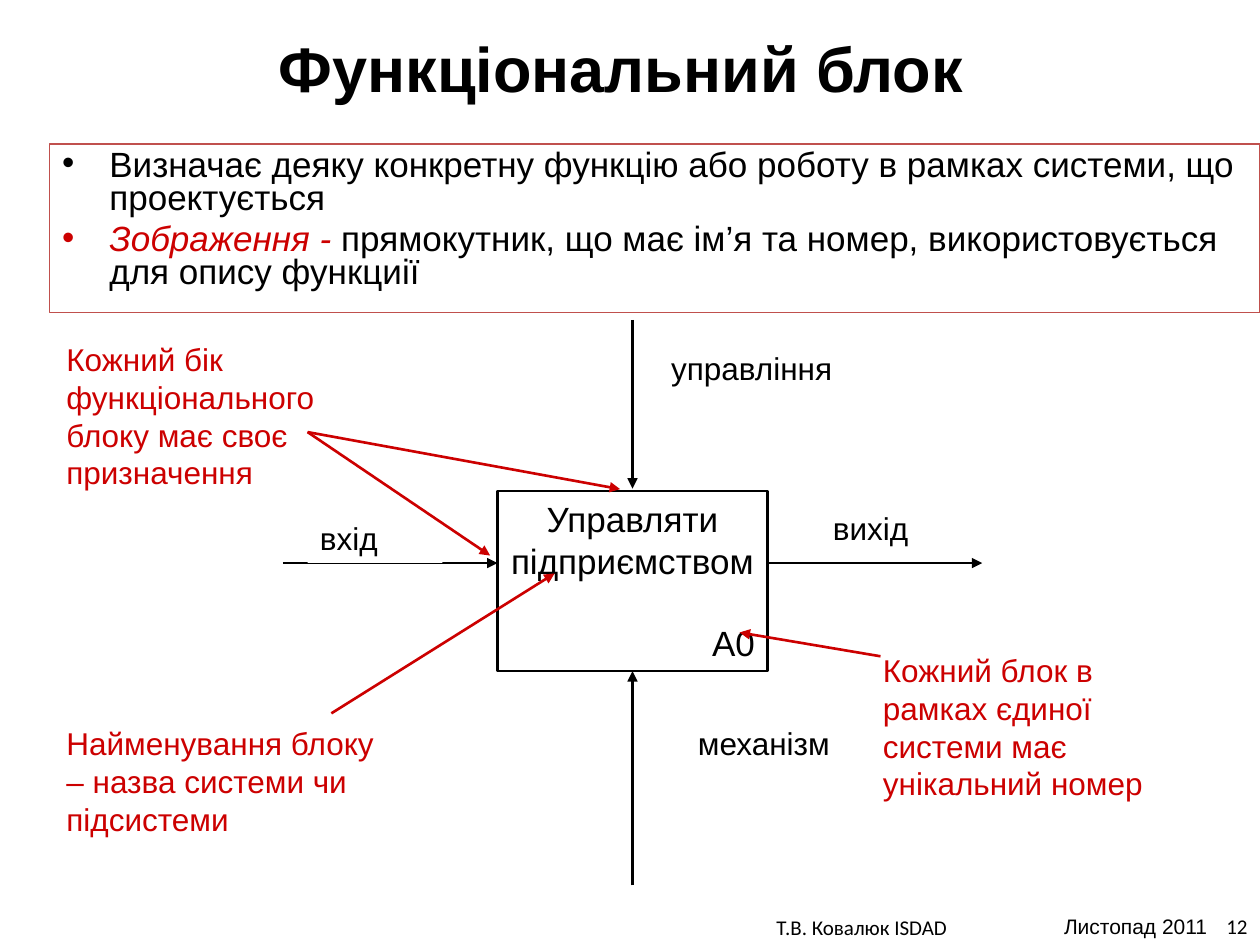
from lxml.etree import SubElement
from pptx import Presentation
from pptx.dml.color import RGBColor
from pptx.enum.shapes import MSO_CONNECTOR as Connector, MSO_SHAPE as Shape
from pptx.enum.text import MSO_ANCHOR as Anchor, MSO_AUTO_SIZE as AutoSize, PP_ALIGN as Align
from pptx.oxml.ns import qn
from pptx.util import Cm, Pt

BLACK, WHITE, RED, BORDER = "000000", "FFFFFF", "CC0000", "C0504D"


def colour(code):
    return RGBColor.from_string(code)


class BlockSlide:
    font = "Arial"
    line_width = 1.5

    def __init__(self, slide):
        self.slide = slide

    def style(self, run, size, code=BLACK, font=None, bold=False, italic=False):
        run.font.name = font or self.font
        run.font.size = Pt(size)
        run.font.bold = bold
        run.font.italic = italic
        run.font.color.rgb = colour(code)

    def place(self, shape, left, top, width, height):
        shape.left, shape.top = Cm(left), Cm(top)
        shape.width, shape.height = Cm(width), Cm(height)

    def title(self, text, *box):
        heading = self.slide.shapes.title
        self.place(heading, *box)
        frame = heading.text_frame
        frame.text = text
        frame.auto_size = AutoSize.NONE
        frame.vertical_anchor = Anchor.MIDDLE
        frame.paragraphs[0].alignment = Align.CENTER
        self.style(frame.paragraphs[0].runs[0], 36, bold=True)

    def bullets(self, items, *box):
        body = self.slide.placeholders[1]
        self.place(body, *box)
        body.line.color.rgb = colour(BORDER)
        body.line.width = Pt(0.75)
        frame = body.text_frame
        frame.auto_size = AutoSize.NONE
        frame.vertical_anchor = Anchor.TOP
        for index, (term, definition) in enumerate(items):
            paragraph = frame.add_paragraph() if index else frame.paragraphs[0]
            properties = paragraph._p.get_or_add_pPr()
            properties.set("marL", str(Cm(0.95)))
            properties.set("indent", str(-Cm(0.95)))
            SubElement(properties, qn("a:buFont"), typeface=self.font)
            SubElement(properties, qn("a:buChar"), char="•")
            paragraph.line_spacing = 0.8
            paragraph.space_before = Pt(4 if index else 0)
            if term:
                run = paragraph.add_run()
                run.text = term
                self.style(run, 20, RED, italic=True)
            run = paragraph.add_run()
            run.text = definition
            self.style(run, 20)

    def text(self, text, *box, size=18, code=BLACK, font=None, align=Align.LEFT):
        frame = self.slide.shapes.add_textbox(*map(Cm, box)).text_frame
        frame.word_wrap = True
        frame.text = text
        frame.paragraphs[0].alignment = align
        self.style(frame.paragraphs[0].runs[0], size, code, font)

    def rectangle(self, *box):
        shape = self.slide.shapes.add_shape(Shape.RECTANGLE, *map(Cm, box))
        shape.shadow.inherit = False
        shape.fill.solid()
        shape.fill.fore_color.rgb = colour(WHITE)
        shape.text_frame.vertical_anchor = Anchor.TOP
        return shape

    def label(self, text, *box):
        shape = self.rectangle(*box)
        shape.line.fill.background()
        paragraph = shape.text_frame.paragraphs[0]
        paragraph.text = text
        paragraph.alignment = Align.LEFT
        self.style(paragraph.runs[0], 18)

    def block(self, name, number, *box):
        shape = self.rectangle(*box)
        shape.line.color.rgb = colour(BLACK)
        shape.line.width = Pt(self.line_width)
        frame = shape.text_frame
        frame.text = f"{name}\n{number}"
        for paragraph, align in zip(frame.paragraphs, (Align.CENTER, Align.RIGHT)):
            paragraph.alignment = align
            self.style(paragraph.runs[0], 20)
        frame.paragraphs[1].space_before = Pt(23)

    def arrow(self, start, end, code=BLACK):
        line = self.slide.shapes.add_connector(
            Connector.STRAIGHT, *map(Cm, (*start, *end)))
        line.line.color.rgb = colour(code)
        line.line.width = Pt(self.line_width)
        SubElement(line.line._ln, qn("a:tailEnd"), type="triangle")
        SubElement(line._element.spPr, qn("a:effectLst"))


def main():
    deck = Presentation()
    deck.slide_width, deck.slide_height = Cm(25.4), Cm(19.05)
    page = BlockSlide(deck.slides.add_slide(deck.slide_layouts[1]))

    page.text("Листопад 2011", 21.2, 18.29, 3.5, 0.76, size=12)
    page.text("Т.В. Ковалюк ISDAD", 15.4, 18.31, 7.57, 0.76, size=12, font="Calibri")
    page.title("Функціональний блок", 1.09, 0.33, 22.86, 2.06)
    page.bullets([
        ("", "Визначає деяку конкретну функцію або роботу в рамках системи, що проектується"),
        ("Зображення - ", "прямокутник, що має ім’я та номер, використовується для опису функциії"),
    ], 1, 2.9, 24.4, 3.4)

    left, top, width, height = 10.03, 9.9, 5.44, 3.63
    right, bottom = left + width, top + height
    centre, flow = left + width / 2, 11.35
    page.block("Управляти підприємством", "А0", left, top, width, height)
    page.arrow((centre, 6.45), (centre, top - 0.05))
    page.arrow((5.7, flow), (left, flow))
    page.arrow((right, flow), (19.8, flow))
    page.arrow((centre, 17.85), (centre, bottom))

    for name, *box in [
        ("управління", 13.28, 6.91, 4.88, 1.09),
        ("вхід", 6.2, 10.34, 2.72, 1.01),
        ("вихід", 16.54, 10.13, 3.25, 1.09),
        ("механізм", 13.82, 14.48, 3.25, 1.09),
    ]:
        page.label(name, *box)

    sides = (6.2, 8.71)
    notes = [
        ("Найменування блоку – назва системи чи підсистеми",
         (1.09, 14.48, 6.96, 2.57), (6.68, 14.38), [(11.18, 11.56)]),
        ("Кожний блок в рамках єдиної системи має унікальний номер",
         (17.55, 13, 6.73, 3.33), (17.75, 13.23), [(14.91, 12.75)]),
        ("Кожний бік функціонального блоку має своє призначення",
         (1.09, 6.73, 6.12, 3.33), sides, [(12.5, 9.86), (9.88, 11.2)]),
    ]
    for note, box, start, targets in notes:
        page.text(note, *box, code=RED)
        for target in targets:
            page.arrow(start, target, RED)

    page.text("12", 20.12, 18.29, 5.28, 0.76, size=12, font="Calibri", align=Align.RIGHT)
    deck.save("out.pptx")


if __name__ == "__main__":
    main()
